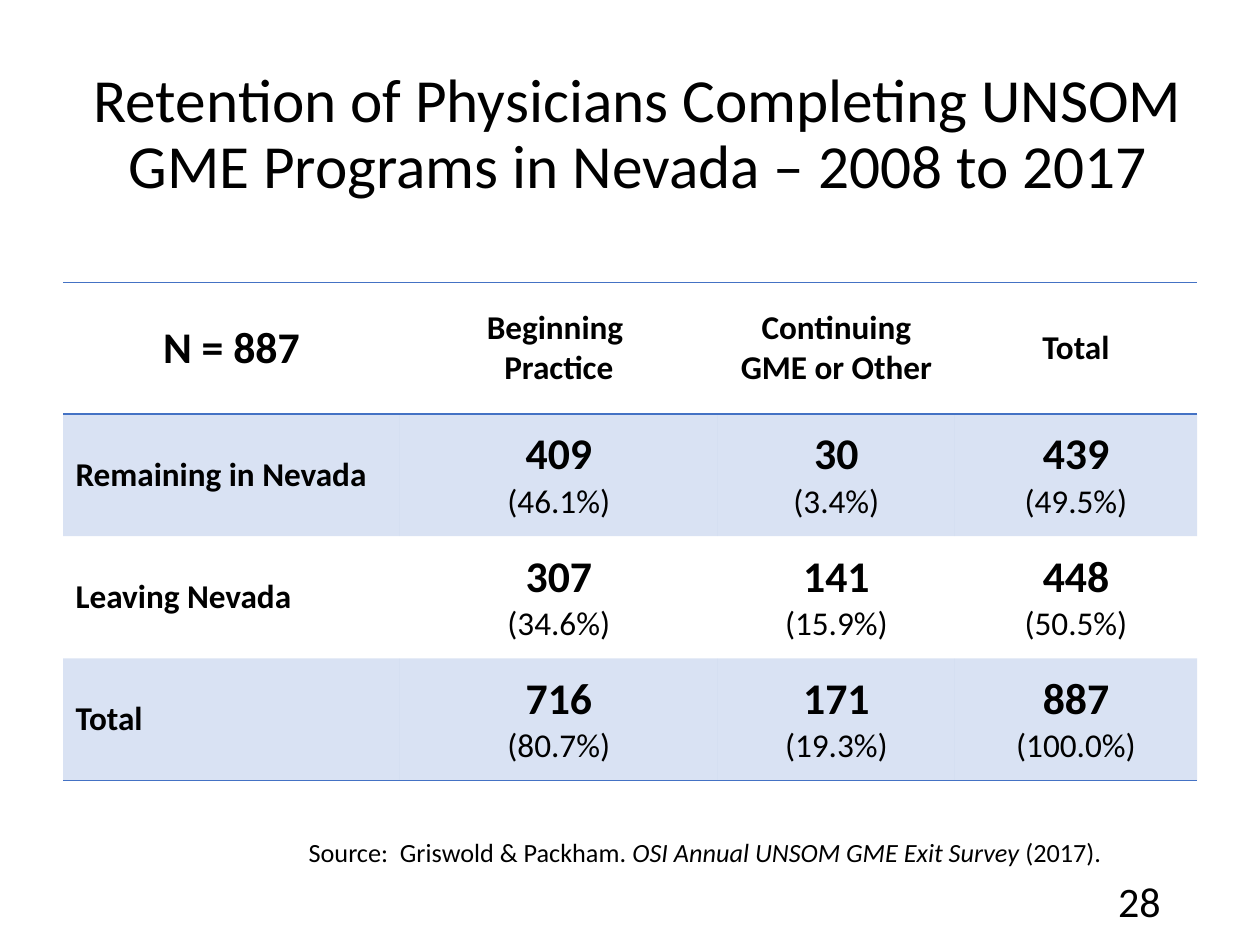
import pptx
import pptx.dml.color
import pptx.enum.text
import pptx.oxml
import pptx.oxml.ns
import pptx.util

Cm = pptx.util.Cm
Pt = pptx.util.Pt
ALIGN = pptx.enum.text.PP_ALIGN
MID = pptx.enum.text.MSO_ANCHOR.MIDDLE
TOP = pptx.enum.text.MSO_ANCHOR.TOP

HUES = {"ink": "000000", "blue": "4472C4"}
BIG = {"size": Pt(25), "bold": True}
HEAD = {"size": Pt(19), "bold": True}
PLAIN = {"size": Pt(19), "bold": False}
NOTE = {"size": Pt(15)}
SLANT = {"size": Pt(15), "italic": True}
PLAIN_GRID = "{2D5ABB26-0587-4C30-8999-92F81FD0307C}"

COLS = [6.79, 6.41, 4.78, 4.88]
ROWS = [2.66, 2.46, 2.46, 2.46]
HEADS = [["Beginning ", "Practice"], ["Continuing GME or Other"], ["Total"]]
BODY = [
    ("Remaining in Nevada", [("409", "(46.1%)"), ("30", "(3.4%)"), ("439", "(49.5%)")]),
    ("Leaving Nevada", [("307", "(34.6%)"), ("141", "(15.9%)"), ("448", "(50.5%)")]),
    ("Total", [("716", "(80.7%)"), ("171", "(19.3%)"), ("887", "(100.0%)")]),
]


def tint(name):
    return pptx.dml.color.RGBColor.from_string(HUES[name])


def apply(target, style):
    for key, value in style.items():
        setattr(target, key, value)


def write(frame, lines, align):
    for index, runs in enumerate(lines):
        para = frame.paragraphs[0] if index == 0 else frame.add_paragraph()
        para.alignment = align
        for text, style in runs:
            run = para.add_run()
            run.text = text
            apply(run.font, {"name": "Calibri", **style})
            run.font.color.rgb = tint("ink")


def add_text(slide, box, runs, align, anchor):
    frame = slide.shapes.add_textbox(*map(Cm, box)).text_frame
    apply(frame, {"word_wrap": True, "vertical_anchor": anchor})
    write(frame, [runs], align)
    return frame


def shade(cell):
    cell.fill.solid()
    cell.fill.fore_color.rgb = tint("blue")
    color = cell._tc.tcPr.find(".//" + pptx.oxml.ns.qn("a:srgbClr"))
    color.append(pptx.oxml.parse_xml(
        f'<a:alpha {pptx.oxml.ns.nsdecls("a")} val="20000"/>'))


def rule(cell, side):
    cell._tc.get_or_add_tcPr().insert(0, pptx.oxml.parse_xml(
        f'<a:ln{side} {pptx.oxml.ns.nsdecls("a")} w="12700"><a:solidFill>'
        f'<a:srgbClr val="{HUES["blue"]}"/></a:solidFill></a:ln{side}>'))


def add_grid(slide):
    size = len(ROWS), len(COLS)
    box = 1.27, 5.69, sum(COLS), sum(ROWS)
    grid = slide.shapes.add_table(*size, *map(Cm, box)).table
    apply(grid, {"first_row": False, "horz_banding": False})
    grid._tbl.tblPr.find(pptx.oxml.ns.qn("a:tableStyleId")).text = PLAIN_GRID
    for col, width in zip(grid.columns, COLS):
        col.width = Cm(width)
    for row, height in zip(grid.rows, ROWS):
        row.height = Cm(height)

    write(grid.cell(0, 0).text_frame, [[("N = 887", BIG)]], ALIGN.CENTER)
    for c, lines in enumerate(HEADS, 1):
        write(grid.cell(0, c).text_frame, [[(line, HEAD)] for line in lines], ALIGN.CENTER)
    for r, (label, pairs) in enumerate(BODY, 1):
        write(grid.cell(r, 0).text_frame, [[(label, HEAD)]], ALIGN.LEFT)
        for c, (count, share) in enumerate(pairs, 1):
            write(grid.cell(r, c).text_frame, [[(count, BIG)], [(share, PLAIN)]], ALIGN.CENTER)

    last = len(ROWS) - 1
    for r, row in enumerate(grid.rows):
        for cell in row.cells:
            cell.vertical_anchor = MID
            if r % 2:
                shade(cell)
            else:
                cell.fill.background()
            if r in (0, last):
                rule(cell, "B")
            if r == 0:
                rule(cell, "T")


def main():
    deck = pptx.Presentation()
    apply(deck, {"slide_width": Cm(25.4), "slide_height": Cm(19.05)})
    slide = deck.slides.add_slide(deck.slide_layouts[6])
    title = "Retention of Physicians Completing UNSOM GME Programs in Nevada – 2008 to 2017"
    frame = add_text(slide, (0.76, 1.02, 24.21, 3.43), [(title, {"size": Pt(35)})],
                     ALIGN.CENTER, MID)
    frame.paragraphs[0].line_spacing = 0.9
    add_grid(slide)
    source = [("Source:  Griswold & Packham. ", NOTE),
              ("OSI Annual UNSOM GME Exit Survey ", SLANT),
              ("(2017). ", NOTE)]
    add_text(slide, (5.94, 16.74, 16.66, 0.89), source, ALIGN.CENTER, TOP)
    add_text(slide, (17.93, 17.65, 5.72, 1.02), [("28", {"size": Pt(24)})], ALIGN.RIGHT, MID)
    deck.save("out.pptx")


if __name__ == "__main__":
    main()
